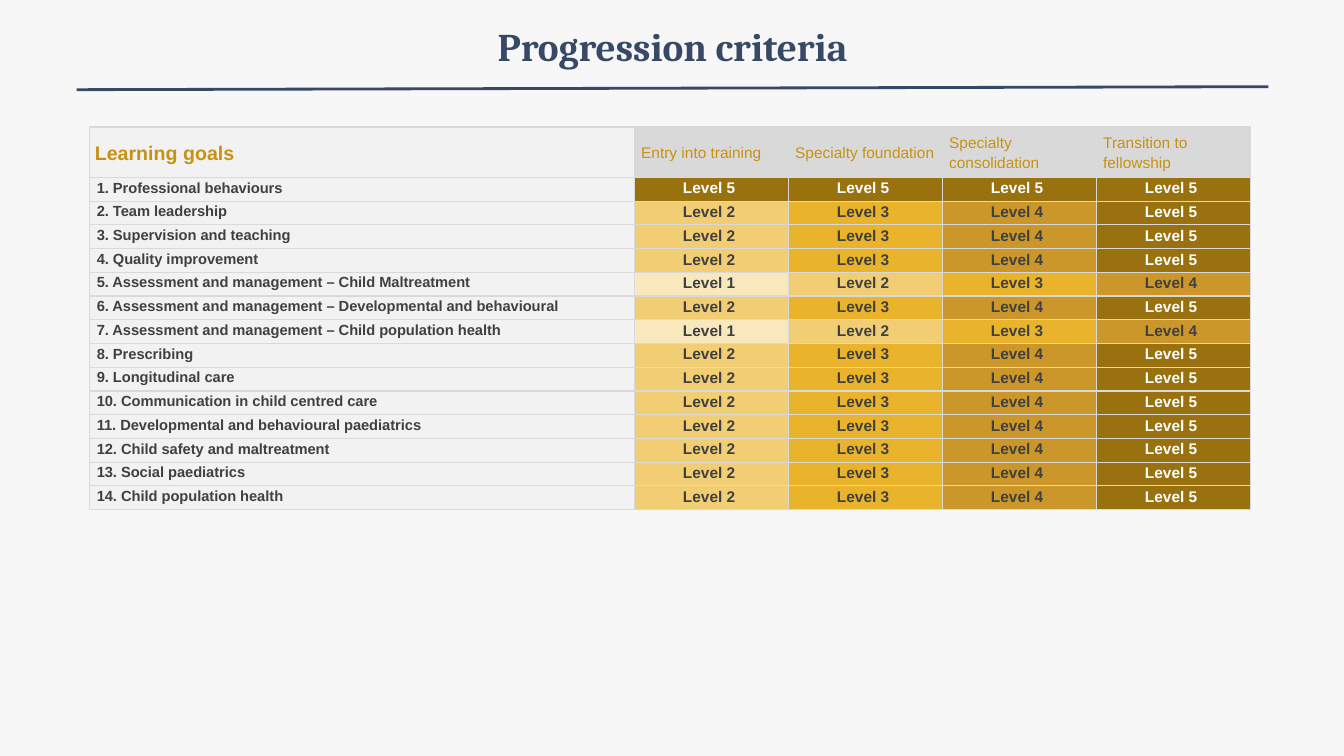
from pptx import Presentation, util as u
from pptx.dml.color import RGBColor
from pptx.enum import shapes, text
from pptx.oxml import parse_xml
from pptx.oxml.ns import nsdecls

THEME = {
    "background": "F7F7F7", "navy": "384967", "gold": "C69214",
    "grey": "D9D9D9", "pale": "F2F2F2", "dark": "404040", "white": "FFFFFF",
    "levels": {1: "F9E8BD", 2: "F1CD73", 3: "E9B32B", 4: "CB972B", 5: "99720F"},
    "title_font": "Cambria", "body_font": "Arial",
    "title_size": 28, "heading_size": 14, "goal_size": 10.5, "level_size": 11,
}
STAGES = ["Entry into training", "Specialty foundation",
          "Specialty consolidation", "Transition to fellowship"]
USUAL, SLOWER = (2, 3, 4, 5), (1, 2, 3, 4)
GOALS = [
    ("Professional behaviours", (5, 5, 5, 5)),
    ("Team leadership", USUAL),
    ("Supervision and teaching", USUAL),
    ("Quality improvement", USUAL),
    ("Assessment and management – Child Maltreatment", SLOWER),
    ("Assessment and management – Developmental and behavioural", USUAL),
    ("Assessment and management – Child population health", SLOWER),
    ("Prescribing", USUAL),
    ("Longitudinal care", USUAL),
    ("Communication in child centred care", USUAL),
    ("Developmental and behavioural paediatrics", USUAL),
    ("Child safety and maltreatment", USUAL),
    ("Social paediatrics", USUAL),
    ("Child population health", USUAL),
]


def write(paragraph, words, color, **font_format):
    paragraph.text = words
    font = paragraph.runs[0].font
    font.color.rgb = RGBColor.from_string(color)
    for name, value in font_format.items():
        setattr(font, name, value)


def fill_cell(cell, words, fill, color, size, bold=True, left=0.07, right=0.07,
              align=text.PP_ALIGN.LEFT, anchor=text.MSO_ANCHOR.TOP):
    """Write one table cell with its fill, insets and grey borders."""
    layout = {"margin_left": u.Inches(left), "margin_right": u.Inches(right),
              "margin_top": 0, "margin_bottom": 0, "vertical_anchor": anchor}
    for name, value in layout.items():
        setattr(cell, name, value)
    paragraph = cell.text_frame.paragraphs[0]
    paragraph.alignment = align
    paragraph.line_spacing = 1.15
    write(paragraph, words, color, name=THEME["body_font"], size=u.Pt(size), bold=bold)
    cell.fill.solid()
    cell.fill.fore_color.rgb = RGBColor.from_string(fill)
    properties = cell._tc.get_or_add_tcPr()
    for position, side in enumerate(("lnL", "lnR", "lnT", "lnB")):
        properties.insert(position, parse_xml(
            f'<a:{side} {nsdecls("a")} w="{u.Pt(1)}"><a:solidFill>'
            f'<a:srgbClr val="{THEME["grey"]}"/></a:solidFill></a:{side}>'))


deck = Presentation()
deck.slide_width, deck.slide_height = u.Inches(13.33), u.Inches(7.5)
slide = deck.slides.add_slide(deck.slide_layouts[6])
slide.background.fill.solid()
slide.background.fill.fore_color.rgb = RGBColor.from_string(THEME["background"])

# Title and rule
title = slide.shapes.add_textbox(u.Inches(2.17), u.Inches(0.17), u.Inches(9), u.Inches(1.25))
title.text_frame.word_wrap = True
heading = title.text_frame.paragraphs[0]
heading.alignment = text.PP_ALIGN.CENTER
write(heading, "Progression criteria", THEME["navy"], name=THEME["title_font"],
      size=u.Pt(THEME["title_size"]), bold=True)

rule = slide.shapes.add_connector(shapes.MSO_CONNECTOR.STRAIGHT, u.Inches(0.76),
                                  u.Inches(0.89), u.Inches(12.58), u.Inches(0.86))
rule.line.color.rgb = RGBColor.from_string(THEME["navy"])
rule.line.width = u.Pt(2)
rule._element.spPr.append(parse_xml(f'<a:effectLst {nsdecls("a")}/>'))

# Criteria table
width, height, goal_width, header_height = 11.51, 3.8, 5.4, 0.5
criteria = slide.shapes.add_table(len(GOALS) + 1, len(STAGES) + 1, u.Inches(0.89),
                                  u.Inches(1.26), u.Inches(width), u.Inches(height)).table
for index, column in enumerate(criteria.columns):
    column.width = u.Inches((width - goal_width) / len(STAGES) if index else goal_width)
for index, row in enumerate(criteria.rows):
    row.height = u.Inches((height - header_height) / len(GOALS) if index else header_height)

middle = text.MSO_ANCHOR.MIDDLE
fill_cell(criteria.cell(0, 0), "Learning goals", THEME["pale"], THEME["gold"],
          THEME["heading_size"], left=0.05, anchor=middle)
for column, stage in enumerate(STAGES, 1):
    fill_cell(criteria.cell(0, column), stage, THEME["grey"], THEME["gold"],
              THEME["level_size"], bold=False, anchor=middle)

for number, (goal, levels) in enumerate(GOALS, 1):
    fill_cell(criteria.cell(number, 0), f"{number}. {goal}", THEME["pale"],
              THEME["dark"], THEME["goal_size"])
    for column, level in enumerate(levels, 1):
        fill_cell(criteria.cell(number, column), f"Level {level}", THEME["levels"][level],
                  THEME["white" if level == 5 else "dark"], THEME["level_size"],
                  left=0.05, right=0.09, align=text.PP_ALIGN.CENTER)

deck.save("out.pptx")
